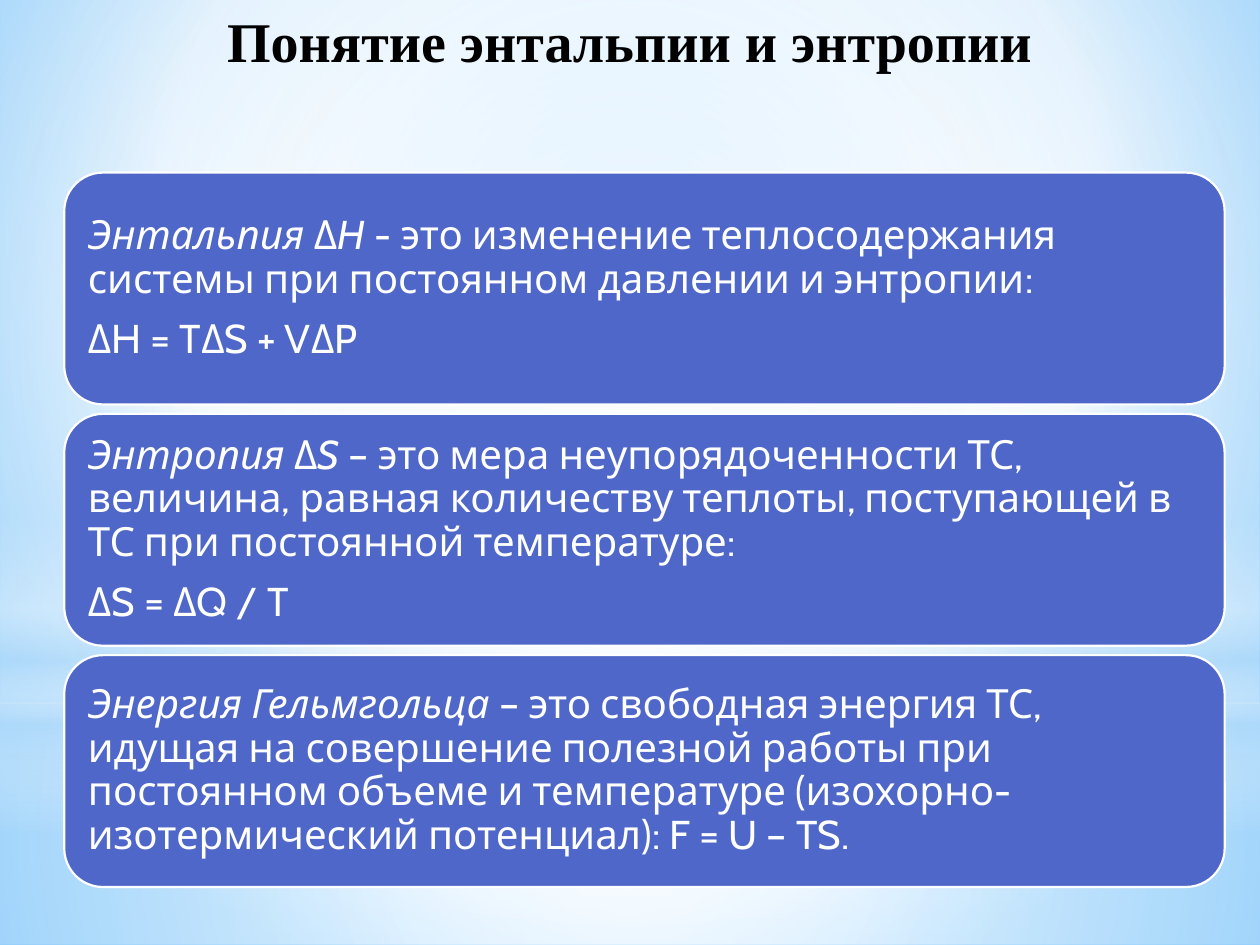
from dataclasses import dataclass
from typing import NamedTuple, Optional

import pptx
import pptx.dml.color
import pptx.enum.shapes
import pptx.enum.text
import pptx.oxml
import pptx.oxml.ns
import pptx.util

Inches = pptx.util.Inches
Pt = pptx.util.Pt
RGBColor = pptx.dml.color.RGBColor
Shapes = pptx.enum.shapes.MSO_SHAPE
Align = pptx.enum.text.PP_ALIGN
Anchor = pptx.enum.text.MSO_ANCHOR


@dataclass(frozen=True)
class Theme:
    card: RGBColor = RGBColor.from_string("4E67C8")
    light: RGBColor = RGBColor.from_string("FFFFFF")
    dark: RGBColor = RGBColor.from_string("000000")
    title_font: str = "Times New Roman"
    body_font: str = "Cabin"
    title_size: int = 32
    body_size: int = 23
    paragraph_gap: float = 9.7
    white: str = "FFFFFF"
    pale: str = "B4DCFA"
    sky: str = "9ED5FF"
    azure: str = "5BB9FF"


THEME = Theme()


class Stop(NamedTuple):
    position: int
    color: str
    opacity: int = 100


class Gradient(NamedTuple):
    """Circular around the focus (left, top, right, bottom), or vertical without one."""
    stops: list[Stop]
    focus: Optional[tuple[int, int, int, int]] = None


class Glow(NamedTuple):
    kind: Shapes
    top: float
    height: float
    gradient: Gradient


class Part(NamedTuple):
    text: str
    italic: bool = False


CENTER = (50, 50, 50, 50)
SLIDE_WIDTH, SLIDE_HEIGHT = 10, 7.5
BACKGROUND = Gradient(
    [Stop(0, THEME.sky), Stop(60, THEME.white), Stop(100, THEME.azure)], (20, 10, 20, 60))
GLOWS = [
    Glow(Shapes.RECTANGLE, 5.58, 1.92, Gradient(
        [Stop(0, THEME.white, 91), Stop(37, THEME.white, 76), Stop(100, THEME.pale, 79)], CENTER)),
    Glow(Shapes.RECTANGLE, 0, 5.58, Gradient(
        [Stop(0, THEME.white, 89), Stop(48, THEME.white, 62), Stop(100, THEME.pale, 79)], CENTER)),
    Glow(Shapes.RECTANGLE, 4.12, 2.5, Gradient(
        [Stop(0, THEME.white, 0), Stop(29, THEME.white, 30), Stop(45, THEME.pale, 40),
         Stop(55, THEME.white, 26), Stop(65, THEME.pale, 60), Stop(100, THEME.white, 0)])),
    Glow(Shapes.OVAL, 1.75, 5.58, Gradient(
        [Stop(0, THEME.white), Stop(56, THEME.white, 0)], CENTER)),
]

CARD_LEFT, CARD_WIDTH, CARD_HEIGHT = 0.51, 9.21, 1.84
FIRST_CARD_TOP, LAST_CARD_TOP = 1.37, 5.2
CARDS = [
    [
        [Part("Энтальпия", True), Part(" Δ"), Part("H", True),
         Part(" - это изменение теплосодержания системы при постоянном давлении и энтропии:")],
        [Part("ΔH = TΔS + VΔP")],
    ],
    [
        [Part("Энтропия", True), Part(" Δ"), Part("S", True),
         Part(" – это мера неупорядоченности ТС, величина, равная количеству теплоты, "
              "поступающей в ТС при постоянной температуре:")],
        [Part("ΔS = ΔQ / T")],
    ],
    [
        [Part("Энергия Гельмгольца", True),
         Part(" – это свободная энергия ТС, идущая на совершение полезной работы при "
              "постоянном объеме и температуре (изохорно-изотермический потенциал): "
              "F = U – TS.")],
    ],
]


def apply_gradient(fill, owner, gradient: Gradient) -> None:
    """Fill with the stops; owner is the XML element that holds the fill."""
    fill.gradient()
    element = owner.xpath(".//a:gradFill")[0]
    for child in list(element):
        element.remove(child)
    stops = "".join(
        f'<a:gs pos="{stop.position * 1000}"><a:srgbClr val="{stop.color}">'
        f'<a:alpha val="{stop.opacity * 1000}"/></a:srgbClr></a:gs>'
        for stop in gradient.stops)
    if gradient.focus:
        sides = " ".join(f'{side}="{value * 1000}"' for side, value in zip("ltrb", gradient.focus))
        direction = f'<a:path path="circle"><a:fillToRect {sides}/></a:path>'
    else:
        direction = '<a:lin ang="5400000" scaled="0"/>'
    namespace = pptx.oxml.ns.nsdecls("a")
    source = pptx.oxml.parse_xml(
        f"<a:gradFill {namespace}><a:gsLst>{stops}</a:gsLst>{direction}</a:gradFill>")
    element.extend(list(source))


def draw_glow(slide, glow: Glow) -> None:
    shape = slide.shapes.add_shape(
        glow.kind, 0, Inches(glow.top), Inches(SLIDE_WIDTH), Inches(glow.height))
    shape.shadow.inherit = False
    shape.line.fill.background()
    apply_gradient(shape.fill, shape.element, glow.gradient)


def draw_title(slide, text: str) -> None:
    title = slide.shapes.add_textbox(0, 0, Inches(SLIDE_WIDTH), Inches(1.25))
    title.text_frame.word_wrap = True
    title.text_frame.text = text
    paragraph = title.text_frame.paragraphs[0]
    paragraph.alignment = Align.CENTER
    font = paragraph.runs[0].font
    font.name = THEME.title_font
    font.size = Pt(THEME.title_size)
    font.bold = True
    font.color.rgb = THEME.dark


def write_paragraph(paragraph, parts: list[Part]) -> None:
    paragraph.alignment = Align.LEFT
    paragraph.line_spacing = 0.9
    paragraph.space_after = Pt(THEME.paragraph_gap)
    for part in parts:
        run = paragraph.add_run()
        run.text = part.text
        run.font.name = THEME.body_font
        run.font.size = Pt(THEME.body_size)
        run.font.italic = part.italic
        run.font.color.rgb = THEME.light


def draw_card(slide, top: float, paragraphs: list[list[Part]]) -> None:
    card = slide.shapes.add_shape(
        Shapes.ROUNDED_RECTANGLE, Inches(CARD_LEFT), Inches(top),
        Inches(CARD_WIDTH), Inches(CARD_HEIGHT))
    card.shadow.inherit = False
    card.fill.solid()
    card.fill.fore_color.rgb = THEME.card
    card.line.color.rgb = THEME.light
    card.line.width = Pt(1.25)
    frame = card.text_frame
    frame.word_wrap = True
    frame.vertical_anchor = Anchor.MIDDLE
    frame.margin_left = frame.margin_right = Inches(0.1)
    frame.margin_top = frame.margin_bottom = Inches(0.1)
    for index, parts in enumerate(paragraphs):
        write_paragraph(frame.add_paragraph() if index else frame.paragraphs[0], parts)


def main() -> None:
    presentation = pptx.Presentation()
    presentation.slide_width = Inches(SLIDE_WIDTH)
    presentation.slide_height = Inches(SLIDE_HEIGHT)
    slide = presentation.slides.add_slide(presentation.slide_layouts[6])
    apply_gradient(slide.background.fill, slide.element, BACKGROUND)
    for glow in GLOWS:
        draw_glow(slide, glow)
    draw_title(slide, "Понятие энтальпии и энтропии")
    pitch = (LAST_CARD_TOP - FIRST_CARD_TOP) / (len(CARDS) - 1)
    for index, paragraphs in enumerate(CARDS):
        draw_card(slide, FIRST_CARD_TOP + index * pitch, paragraphs)
    presentation.save("out.pptx")


if __name__ == "__main__":
    main()
